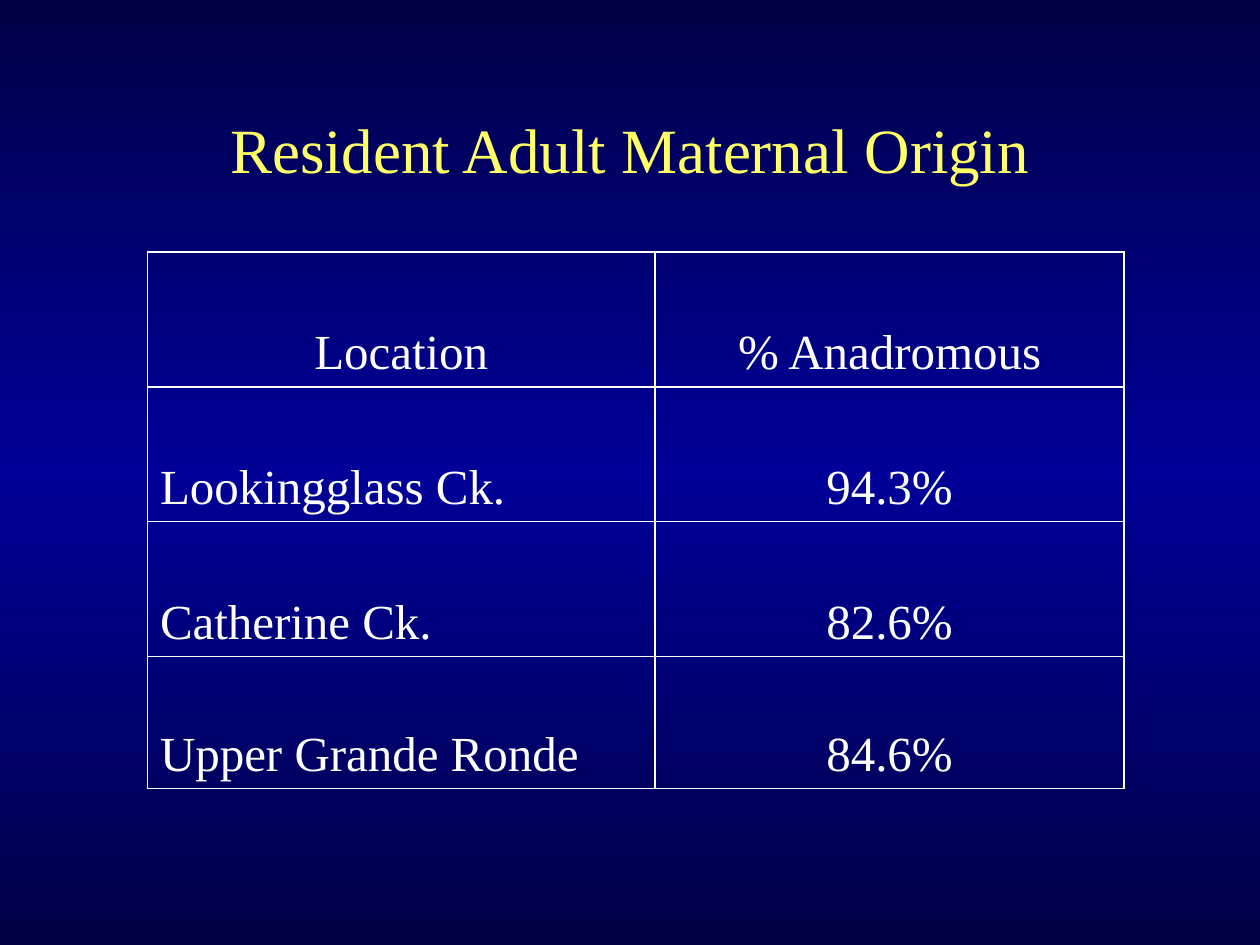
from copy import deepcopy
from dataclasses import dataclass

from pptx import Presentation, util as u
from pptx.dml.color import RGBColor as Rgb
from pptx.enum import text
from pptx.oxml import parse_xml
from pptx.oxml.ns import nsdecls, qn


@dataclass(frozen=True)
class Theme:
    font: str = "Times New Roman"
    edge: str = "000046"
    mid: str = "000099"
    head: str = "FFFF66"
    ink: str = "FFFFFF"
    big: int = 36
    size: int = 28
    rule: float = 1


LOOK = Theme()
WIDE, HIGH = u.Inches(10), u.Inches(7.5)
COLS = (4.03, 3.72)
ROWS = (1.07, 1.07, 1.07, 1.05)
DATA = (
    ("Location", "% Anadromous"),
    ("Lookingglass Ck.", "94.3%"),
    ("Catherine Ck.", "82.6%"),
    ("Upper Grande Ronde", "84.6%"),
)


def assign(item, vals):
    for name, val in vals.items():
        setattr(item, name, val)


def write(frame, words, size, color, align):
    frame.text = words
    para = frame.paragraphs[0]
    para.alignment = align
    font = para.runs[0].font
    assign(font, {"name": LOOK.font, "size": u.Pt(size), "bold": False})
    font.color.rgb = Rgb.from_string(color)
    return para


def paint(slide):
    """Vertical gradient, brightest halfway down."""
    fill = slide.background.fill
    fill.gradient()
    fill.gradient_angle = 90
    stops = next(slide.element.iter(qn("a:gsLst")))
    stops.append(deepcopy(stops[-1]))
    tints = (LOOK.edge, LOOK.mid, LOOK.edge)
    for i, (stop, tint) in enumerate(zip(fill.gradient_stops, tints)):
        stop.position = i / 2
        stop.color.rgb = Rgb.from_string(tint)


def title(slide, words):
    shape = slide.shapes.title
    assign(shape, {"left": int(WIDE * 0.075), "top": u.Inches(0.88),
                   "width": int(WIDE * 0.85), "height": u.Inches(0.83)})
    frame = shape.text_frame
    assign(frame, {"margin_top": 0, "margin_bottom": 0, "word_wrap": True,
                   "auto_size": text.MSO_AUTO_SIZE.NONE,
                   "vertical_anchor": text.MSO_ANCHOR.TOP})
    write(frame, words, LOOK.big, LOOK.head, text.PP_ALIGN.CENTER)


def border(cell):
    props = cell._tc.get_or_add_tcPr()
    for i, side in enumerate(("lnL", "lnR", "lnT", "lnB")):
        props.insert(i, parse_xml(
            f'<a:{side} {nsdecls("a")} w="{u.Pt(LOOK.rule)}"><a:solidFill>'
            f'<a:srgbClr val="{LOOK.ink}"/></a:solidFill></a:{side}>'))


def table(slide):
    grid = slide.shapes.add_table(
        len(ROWS), len(COLS), u.Inches(1.17), u.Inches(2),
        u.Inches(sum(COLS)), u.Inches(sum(ROWS))).table
    assign(grid, {"first_row": False, "horz_banding": False})
    for col, width in zip(grid.columns, COLS):
        col.width = u.Inches(width)
    for row, height in zip(grid.rows, ROWS):
        row.height = u.Inches(height)

    # Place names sit left; headings and values are centred
    for r, line in enumerate(DATA):
        for c, words in enumerate(line):
            cell = grid.cell(r, c)
            cell.fill.background()
            cell.vertical_anchor = text.MSO_ANCHOR.BOTTOM
            left = r > 0 and c == 0
            align = text.PP_ALIGN.LEFT if left else text.PP_ALIGN.CENTER
            para = write(cell.text_frame, words, LOOK.size, LOOK.ink, align)
            para.space_before = u.Pt(LOOK.size * 0.2)
            border(cell)


def main():
    deck = Presentation()
    assign(deck, {"slide_width": WIDE, "slide_height": HIGH})
    slide = deck.slides.add_slide(deck.slide_layouts[5])
    paint(slide)
    title(slide, "Resident Adult Maternal Origin")
    table(slide)
    deck.save("out.pptx")


if __name__ == "__main__":
    main()
